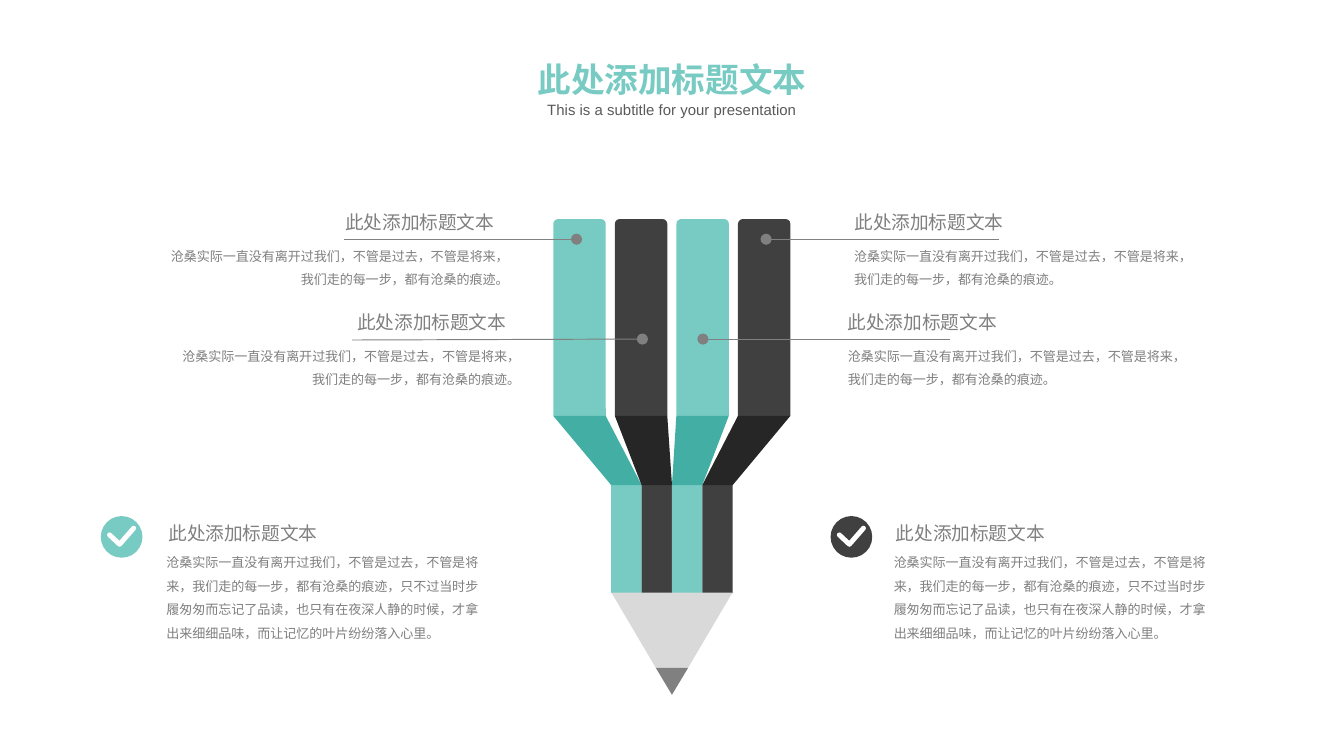
from lxml import etree
from pptx import Presentation
from pptx.dml.color import RGBColor
from pptx.enum.shapes import MSO_CONNECTOR, MSO_SHAPE
from pptx.enum.text import MSO_AUTO_SIZE, PP_ALIGN
from pptx.oxml.ns import qn
from pptx.util import Inches, Pt

LEFT, MID, RIGHT = PP_ALIGN.LEFT, PP_ALIGN.CENTER, PP_ALIGN.RIGHT
DISC, BAR = MSO_SHAPE.OVAL, MSO_SHAPE.ROUND_2_SAME_RECTANGLE
LINE, GROW = MSO_CONNECTOR.STRAIGHT, MSO_AUTO_SIZE.SHAPE_TO_FIT_TEXT

# Content
TITLE = "此处添加标题文本"
SUB = "This is a subtitle for your presentation"
NOTE = ["沧桑实际一直没有离开过我们，不管是过去，不管是将来，",
        "我们走的每一步，都有沧桑的痕迹。"]
LONG = ["沧桑实际一直没有离开过我们，不管是过去，不管是将来，我们走的每一步，"
        "都有沧桑的痕迹，只不过当时步履匆匆而忘记了品读，也只有在夜深人静的时候，"
        "才拿出来细细品味，而让记忆的叶片纷纷落入心里。"]

THEME = {
    "teal": "77CBC3", "deep": "43AFA4", "dark": "404040", "black": "262626",
    "wood": "D9D9D9", "gray": "808080", "sub": "595959", "white": "FFFFFF",
    "cjk": "Noto Sans CJK SC", "latin": "Arial",
    "title": 18, "head": 10, "note": 7, "small": 8, "rule": 0.5, "tick": 2.63,
}

# Grid: 100 square units across a 16:9 slide
WIDE, HIGH = 100, 56.25
UNIT = Inches(10) / WIDE

# Callouts: dot, rule end, heading column, note column, alignment
CALLS = [
    ((57, 17.8), (74.3, 17.8), 62.6, 63.55, LEFT),
    ((52.3, 25.23), (70.7, 25.23), 62.1, 63.1, LEFT),
    ((42.9, 17.8), (25.6, 17.8), 24.7, 11.55, RIGHT),
    ((47.8, 25.23), (26.2, 25.3), 25.6, 12.4, RIGHT),
]
# Checked items: disc column, text column, colour
CHECKS = [(7.5, 12.38, "teal"), (61.8, 66.5, "dark")]

# Pencil: bars above, core strips below, folds between
HUES = [("teal", "deep"), ("dark", "black")] * 2
BARS, STEP, BROAD = 41.17, 4.58, 3.9
CORE, STRIP = 45.48, 2.26
TOP, FOLD, NECK, WOOD, LEAD, TIP = 16.3, 30.95, 36.1, 44.1, 49.7, 51.7


def grid(*nums):
    return [round(n * UNIT) for n in nums]


def paint(shape, fill):
    shape.shadow.inherit = False
    shape.fill.solid()
    shape.fill.fore_color.rgb = RGBColor.from_string(THEME[fill])
    shape.line.fill.background()
    return shape


def ink(line, color, size):
    line.color.rgb = RGBColor.from_string(THEME[color])
    line.width = Pt(THEME[size])


def preset(kind, box, fill):
    return paint(slide.shapes.add_shape(kind, *grid(*box)), fill)


def poly(dots, fill, close=True):
    first, *rest = [grid(*dot) for dot in dots]
    path = slide.shapes.build_freeform(*first)
    path.add_line_segments(rest, close=close)
    return paint(path.convert_to_shape(), fill)


def write(box, lines, size, color="gray", face="cjk", align=LEFT,
          flush=False, gap=None, bold=False):
    frame = slide.shapes.add_textbox(*grid(*box)).text_frame
    frame.word_wrap, frame.auto_size = True, GROW
    if flush:
        frame.margin_left = frame.margin_right = 0
        frame.margin_top = frame.margin_bottom = 0
    frame.text = "\n".join(lines)
    for para in frame.paragraphs:
        para.alignment = align
        if gap:
            para.line_spacing = gap
        for run in para.runs:
            font = run.font
            font.name, font.size = THEME[face], Pt(THEME[size])
            font.bold = bold
            font.color.rgb = RGBColor.from_string(THEME[color])
            east = etree.SubElement(run._r.rPr, qn("a:ea"))
            east.set("typeface", THEME[face])


def rule(start, end):
    link = slide.shapes.add_connector(LINE, *grid(*start, *end))
    ink(link.line, "gray", "rule")
    props = link._element.spPr
    head = etree.SubElement(props.find(qn("a:ln")), qn("a:headEnd"))
    head.set("type", "oval")
    etree.SubElement(props, qn("a:effectLst"))


deck = Presentation()
deck.slide_width, deck.slide_height = grid(WIDE, HIGH)
slide = deck.slides.add_slide(deck.slide_layouts[6])

# Pencil body
for i, (hue, shade) in enumerate(HUES):
    x, low = BARS + i * STEP, CORE + i * STRIP
    bar = preset(BAR, (x, TOP, BROAD, FOLD - TOP), hue)
    bar.adjustments[0] = 0.09
    poly([(low, NECK), (low + STRIP, NECK), (low + STRIP, WOOD),
          (low + STRIP / 2, WOOD + 1.1), (low, WOOD)], hue)
    poly([(x, FOLD), (x + BROAD, FOLD), (low + STRIP, NECK), (low, NECK)], shade)

# Pencil point
poly([(45.5, WOOD), (54.5, WOOD), (51.2, LEAD), (48.8, LEAD)], "wood")
poly([(48.8, LEAD), (51.2, LEAD), (50, TIP)], "gray")

# Callouts beside the bars
for dot, end, head, note, align in CALLS:
    row = dot[1]
    rule(dot, end)
    write((note, row + 0.1, 26.3, 3.5), NOTE, "note", align=align,
          flush=True, gap=1.5)
    write((head, row - 2.6, 13.5, 2.7), [TITLE], "head")

# Checked items at the foot
for x, col, hue in CHECKS:
    preset(DISC, (x, 38.4, 3.1, 3.1), hue)
    tick = poly([(x + 0.65, 39.8), (x + 1.4, 40.5), (x + 2.45, 39.3)], hue, False)
    ink(tick.line, "white", "tick")
    edge = tick._element.spPr.find(qn("a:ln"))
    edge.set("cap", "rnd")
    write((col, 40.7, 24.1, 7.1), LONG, "note", flush=True, gap=1.5)
    write((col - 0.82, 38.35, 24.3, 2.7), [TITLE], "head")

# Title and subtitle
write((37.85, 3.9, 24.3, 4), [TITLE], "title", "teal", align=MID, bold=True)
write((40.15, 7.5, 19.7, 1.3), [SUB], "small", "sub", "latin", MID, True)

deck.save("out.pptx")
